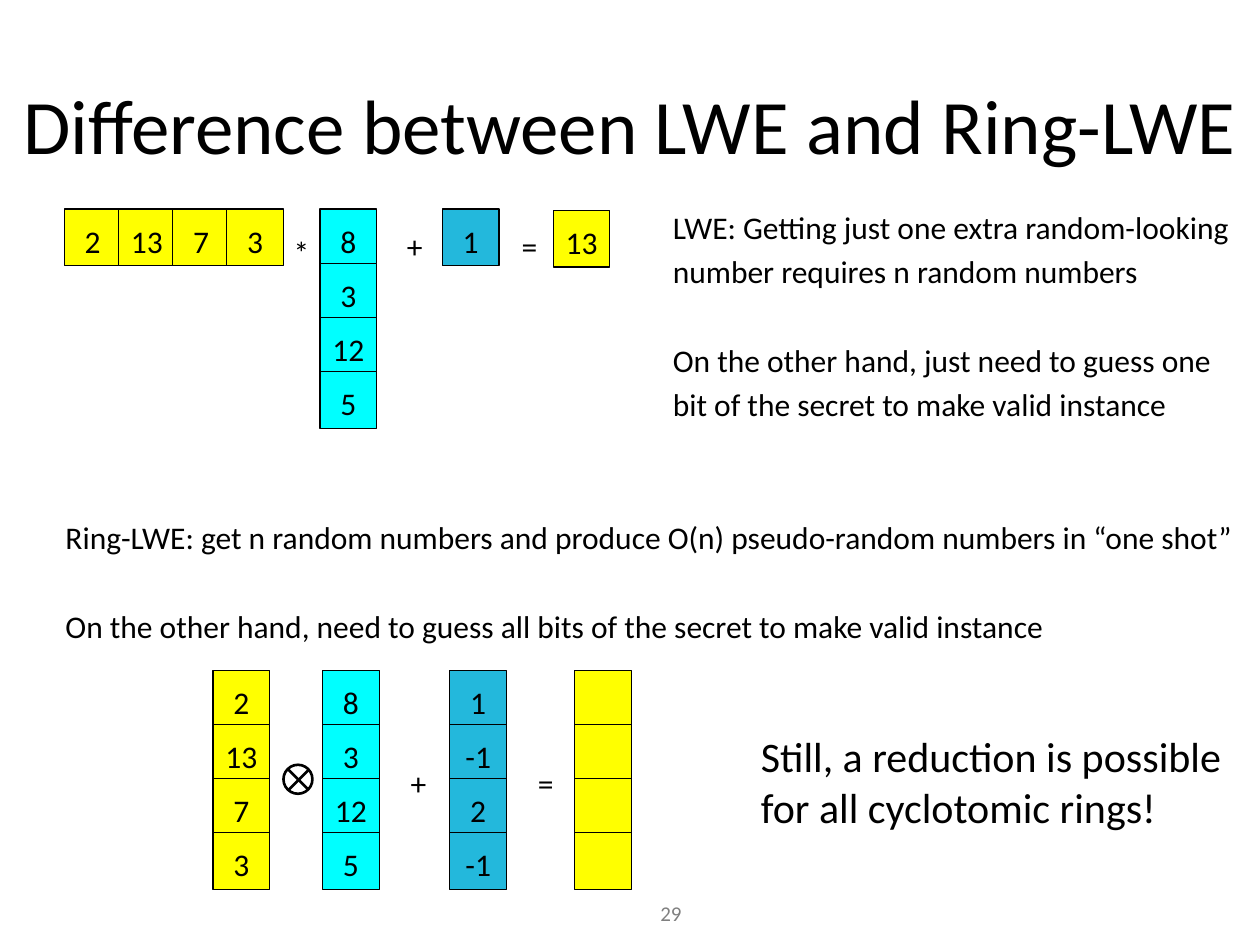
from lxml.etree import SubElement
from pptx import Presentation
from pptx.dml.color import RGBColor
from pptx.enum.shapes import MSO_CONNECTOR, MSO_SHAPE
from pptx.enum.text import MSO_ANCHOR, MSO_AUTO_SIZE, PP_ALIGN
from pptx.oxml.ns import qn
from pptx.util import Inches, Pt

COLORS = {
    "ink": "000000",
    "public": "FFFF00",
    "secret": "00FFFF",
    "error": "23B8DC",
    "number": "808080",
}
FONT = "Calibri"
CELL = 0.45   # side of a vector entry
PITCH = 0.43  # step between entries, so that borders overlap
SPACING = 1.17
BLANK_LINE = 25.5


def color(name):
    return RGBColor.from_string(COLORS[name])


def write(frame, *paragraphs, size=18, ink="ink", align=PP_ALIGN.LEFT,
          anchor=MSO_ANCHOR.TOP, spacing=SPACING, gap=0, wrap=True,
          insets=(0.09, 0.04)):
    """Fill a text frame; gap is the space in points between paragraphs."""
    frame.auto_size = MSO_AUTO_SIZE.NONE
    frame.word_wrap = wrap
    frame.vertical_anchor = anchor
    frame.margin_left = frame.margin_right = Inches(insets[0])
    frame.margin_top = frame.margin_bottom = Inches(insets[1])
    for index, text in enumerate(paragraphs):
        paragraph = frame.paragraphs[0] if index == 0 else frame.add_paragraph()
        paragraph.alignment = align
        paragraph.line_spacing = spacing
        paragraph.space_before = Pt(gap if index else 0)
        run = paragraph.add_run()
        run.text = text
        run.font.name = FONT
        run.font.size = Pt(size)
        run.font.color.rgb = color(ink)


def add_note(slide, box, *paragraphs, **text_format):
    note = slide.shapes.add_textbox(*map(Inches, box))
    write(note.text_frame, *paragraphs, **text_format)


def add_operator(slide, left, top, symbol):
    add_note(slide, (left, top, 0.23, 0.41), symbol)


def add_vector(slide, left, top, entries, role, across=False):
    """Draw a row or column of numbers in touching squares."""
    for index, entry in enumerate(entries):
        x = left + index * PITCH * across
        y = top + index * PITCH * (not across)
        cell = slide.shapes.add_shape(
            MSO_SHAPE.RECTANGLE, *map(Inches, (x, y, CELL, CELL)))
        cell.shadow.inherit = False
        cell.fill.solid()
        cell.fill.fore_color.rgb = color(role)
        cell.line.color.rgb = color("ink")
        cell.line.width = Pt(0.75)
        if entry:
            write(cell.text_frame, entry, align=PP_ALIGN.CENTER,
                  anchor=MSO_ANCHOR.MIDDLE, wrap=False)


def add_ring_product(slide, left, top, diameter=0.23):
    """Draw a circled times sign."""
    circle = slide.shapes.add_shape(
        MSO_SHAPE.OVAL, *map(Inches, (left, top, diameter, diameter)))
    circle.shadow.inherit = False
    circle.fill.background()
    near, far = 0.04, diameter - 0.03
    strokes = [circle]
    for start, end in ((near, far), (far, near)):
        stroke = slide.shapes.add_connector(
            MSO_CONNECTOR.STRAIGHT, Inches(left + near), Inches(top + start),
            Inches(left + far), Inches(top + end))
        SubElement(stroke._element.spPr, qn("a:effectLst"))
        strokes.append(stroke)
    for stroke in strokes:
        stroke.line.color.rgb = color("ink")
        stroke.line.width = Pt(1.5)


def add_title(slide, box, text):
    title = slide.shapes.title
    title.left, title.top, title.width, title.height = map(Inches, box)
    write(title.text_frame, text, size=44, align=PP_ALIGN.CENTER,
          anchor=MSO_ANCHOR.MIDDLE, insets=(0.1, 0.05))


def add_lwe(slide, left, top):
    """Row times column plus error gives a single number."""
    add_vector(slide, left, top, ["2", "13", "7", "3"], "public", across=True)
    add_operator(slide, left + 1.73, top + 0.1, "*")
    add_vector(slide, left + 2.03, top, ["8", "3", "12", "5"], "secret")
    add_operator(slide, left + 2.63, top + 0.05, "+")
    add_vector(slide, left + 3, top, ["1"], "error")
    add_operator(slide, left + 3.54, top + 0.05, "=")
    add_vector(slide, left + 3.88, top + 0.01, ["13"], "public")
    add_note(slide, (left + 4.74, top - 0.1, 4.71, 1.68),
             "LWE: Getting just one extra random-looking number requires n random numbers",
             "On the other hand, just need to guess one bit of the secret to make valid instance",
             gap=BLANK_LINE)


def add_ring_lwe(slide, left, top):
    """Ring product of columns plus error gives a whole column."""
    add_note(slide, (left - 1.26, top - 1.3, 9.53, 1.54),
             "Ring-LWE: get n random numbers and produce O(n) pseudo-random numbers in “one shot”",
             "On the other hand, need to guess all bits of the secret to make valid instance",
             gap=BLANK_LINE)
    columns = [
        (0, ["2", "13", "7", "3"], "public"),
        (0.87, ["8", "3", "12", "5"], "secret"),
        (1.88, ["1", "-1", "2", "-1"], "error"),
        (2.87, [""] * 4, "public"),
    ]
    for offset, entries, role in columns:
        add_vector(slide, left + offset, top, entries, role)
    add_ring_product(slide, left + 0.56, top + 0.75)
    add_operator(slide, left + 1.48, top + 0.65, "+")
    add_operator(slide, left + 2.49, top + 0.65, "=")
    # Conclusion
    add_note(slide, (left + 4.25, top + 0.43, 4.02, 0.91),
             "Still, a reduction is possible for all cyclotomic rings!",
             size=24, spacing=1.0, insets=(0.1, 0.05))


def main():
    deck = Presentation()
    deck.slide_width, deck.slide_height = Inches(10), Inches(7.5)
    slide = deck.slides.add_slide(deck.slide_layouts.get_by_name("Title Only"))
    add_title(slide, (0, 0.34, 10, 1.16), "Difference between LWE and Ring-LWE")
    add_lwe(slide, 0.51, 1.66)
    add_ring_lwe(slide, 1.69, 5.32)
    # Slide number
    add_note(slide, (4.71, 7.1, 1.23, 0.4), "29", size=12, ink="number",
             align=PP_ALIGN.CENTER, spacing=1.0, insets=(0.1, 0.05))
    deck.save("out.pptx")


if __name__ == "__main__":
    main()
